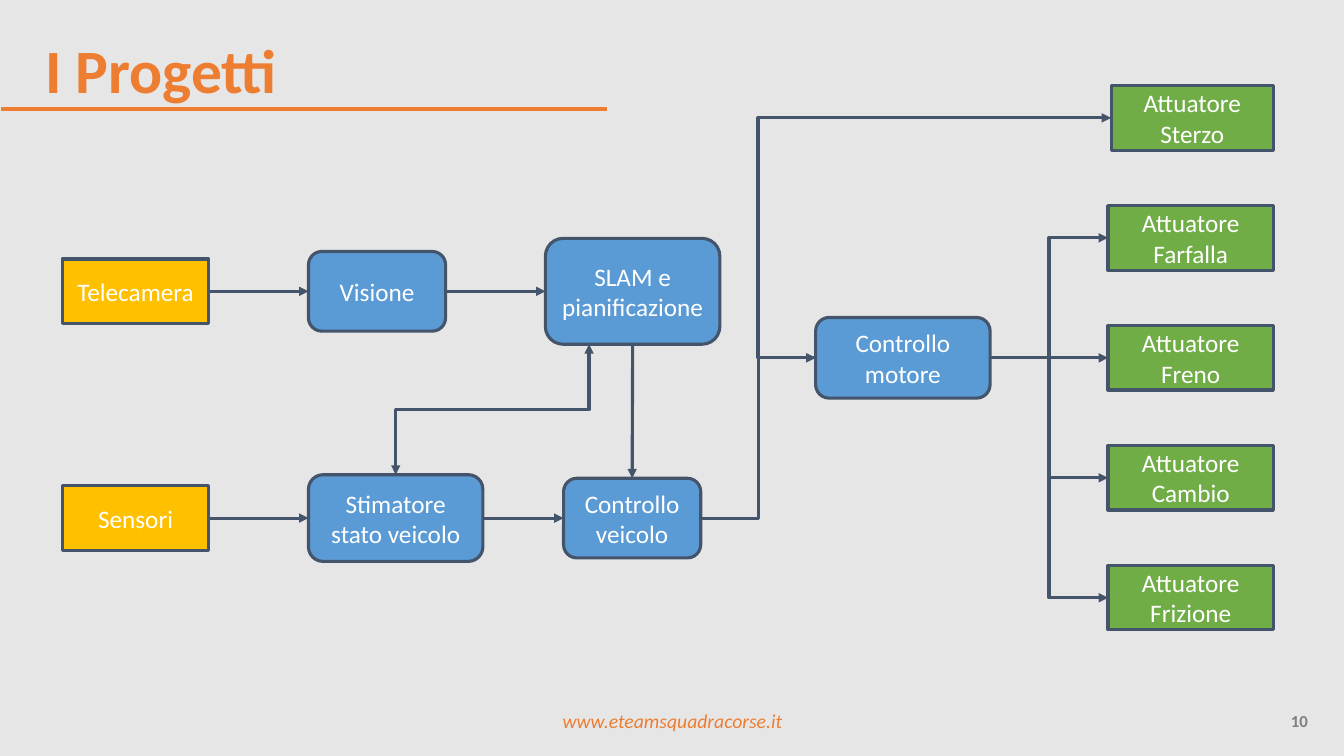
from dataclasses import dataclass

from lxml import etree
from pptx import Presentation
from pptx import util as u
from pptx.dml.color import RGBColor
from pptx.enum import shapes, text
from pptx.oxml import ns

Inches = u.Inches


@dataclass(frozen=True)
class Theme:
    font: str = "Calibri"
    background: str = "E7E6E6"
    accent: str = "ED7D31"
    source: str = "FFC000"
    process: str = "5B9BD5"
    actuator: str = "70AD47"
    outline: str = "44546A"
    label: str = "FFFFFF"
    number: str = "7F7F7F"
    title_size: int = 44
    label_size: int = 18
    footer_size: int = 14
    number_size: int = 12
    rule_width: float = 3
    line_width: float = 2.25


@dataclass(frozen=True)
class Box:
    left: float
    top: float
    width: float
    height: float

    def lengths(self):
        return [Inches(v) for v in (self.left, self.top, self.width, self.height)]


THEME = Theme()
RECT = shapes.MSO_SHAPE.RECTANGLE
ROUNDED = shapes.MSO_SHAPE.ROUNDED_RECTANGLE
STRAIGHT = shapes.MSO_CONNECTOR.STRAIGHT
ELBOW = shapes.MSO_CONNECTOR.ELBOW
TOP, LEFT, BOTTOM, RIGHT = range(4)


def rgb(code):
    return RGBColor.from_string(code)


def write(frame, wording, size, color, align, bold=False, italic=False):
    """Fill a text frame, one paragraph for each line of the wording."""
    frame.word_wrap = True
    frame.vertical_anchor = text.MSO_ANCHOR.MIDDLE
    for index, line in enumerate(wording.split("\n")):
        paragraph = frame.add_paragraph() if index else frame.paragraphs[0]
        paragraph.alignment = align
        run = paragraph.add_run()
        run.text = line
        font = run.font
        font.name, font.size = THEME.font, u.Pt(size)
        font.bold, font.italic = bold, italic
        font.color.rgb = rgb(color)


def add_line(slide, kind, begin, end, color, width):
    line = slide.shapes.add_connector(kind, *begin, *end)
    line.line.color.rgb = rgb(color)
    line.line.width = u.Pt(width)
    etree.SubElement(line._element.spPr, ns.qn("a:effectLst"))
    return line


def add_arrowheads(line, *ends):
    outline = line.line._get_or_add_ln()
    for end in ends:
        etree.SubElement(outline, ns.qn(f"a:{end}"), type="triangle")


def side(node, number):
    """Return the middle of a node's side."""
    x, y = node.left + node.width // 2, node.top + node.height // 2
    return [(x, node.top), (node.left, y),
            (x, node.top + node.height), (node.left + node.width, y)][number]


def straight_arrow(slide, origin, target, leave=RIGHT, arrive=LEFT):
    arrow = add_line(slide, STRAIGHT, side(origin, leave), side(target, arrive),
                     THEME.outline, THEME.line_width)
    arrow.begin_connect(origin, leave)
    arrow.end_connect(target, arrive)
    add_arrowheads(arrow, "tailEnd")


def bent_arrow(slide, begin, end, bend=0.5):
    """Leave sideways and turn at the bend, a share of the horizontal run."""
    arrow = add_line(slide, ELBOW, begin, end, THEME.outline, THEME.line_width)
    guides = arrow._element.spPr.find(ns.qn("a:prstGeom")).find(ns.qn("a:avLst"))
    etree.SubElement(guides, ns.qn("a:gd"), name="adj1",
                     fmla=f"val {round(bend * 100000)}")
    add_arrowheads(arrow, "tailEnd")


def upright_double_arrow(slide, begin, end):
    """Leave upwards and turn halfway: a sideways elbow given a quarter turn."""
    x, y = (begin[0] + end[0]) // 2, (begin[1] + end[1]) // 2
    dx, dy = begin[0] - x, begin[1] - y
    arrow = add_line(slide, ELBOW, (x + dy, y - dx), (x - dy, y + dx),
                     THEME.outline, THEME.line_width)
    arrow._element.spPr.find(ns.qn("a:xfrm")).set("rot", str(90 * 60000))
    add_arrowheads(arrow, "headEnd", "tailEnd")


def add_node(slide, kind, fill, wording, box):
    node = slide.shapes.add_shape(kind, *box.lengths())
    node.shadow.inherit = False
    node.fill.solid()
    node.fill.fore_color.rgb = rgb(fill)
    node.line.color.rgb = rgb(THEME.outline)
    node.line.width = u.Pt(THEME.line_width)
    write(node.text_frame, wording, THEME.label_size, THEME.label,
          text.PP_ALIGN.CENTER)
    return node


def build_heading(slide, box):
    rule_y = Inches(box.top + 0.89)
    add_line(slide, STRAIGHT, (Inches(0.01), rule_y),
             (Inches(box.left + box.width), rule_y), THEME.accent, THEME.rule_width)
    title = slide.shapes.title
    title.left, title.top, title.width, title.height = box.lengths()
    write(title.text_frame, "I Progetti", THEME.title_size, THEME.accent,
          text.PP_ALIGN.LEFT, bold=True)
    title.text_frame.paragraphs[0].line_spacing = 0.9


def build_footer(slide, box):
    site_box = Box(box.left, box.top, 4.5, box.height)
    number_box = Box(box.left + box.width - 0.6, box.top, 0.6, box.height)
    site = slide.shapes.add_textbox(*site_box.lengths())
    write(site.text_frame, "www.eteamsquadracorse.it", THEME.footer_size,
          THEME.accent, text.PP_ALIGN.CENTER, italic=True)
    number = slide.shapes.add_textbox(*number_box.lengths())
    write(number.text_frame, "10", THEME.number_size, THEME.number,
          text.PP_ALIGN.RIGHT, bold=True)


def build_diagram(slide, box):
    """Draw the flow from sensors to actuators; nodes are centred on rows."""
    node_height, row_step = 0.64, 1.19
    rows = [node_height / 2 + row_step * i for i in range(5)]
    vision_row, motor_row, state_row = 2.04, rows[2], 4.29

    def place(kind, fill, wording, left, row, width, height=node_height):
        return add_node(slide, kind, fill, wording, Box(
            box.left + left, box.top + row - height / 2, width, height))

    def process(*details):
        return place(ROUNDED, THEME.process, *details)

    def actuator(name, row, width=1.64):
        return place(RECT, THEME.actuator, f"Attuatore\n{name}",
                     box.width - width, row, width)

    camera = place(RECT, THEME.source, "Telecamera", 0, vision_row, 1.45)
    sensors = place(RECT, THEME.source, "Sensori", 0, state_row, 1.45)
    vision = process("Visione", 2.44, vision_row, 1.36, 0.79)
    slam = process("SLAM e pianificazione", 4.79, vision_row, 1.73, 1.05)
    estimator = process("Stimatore stato veicolo", 2.44, state_row, 1.73, 0.86)
    vehicle = process("Controllo\nveicolo", 4.97, state_row, 1.36, 0.79)
    motor = process("Controllo\nmotore", 7.47, motor_row, 1.73, 0.8)
    steering = actuator("Sterzo", rows[0], 1.61)
    throttle, brake, gearbox, clutch = [
        actuator(name, row) for name, row in
        zip(("Farfalla", "Freno", "Cambio", "Frizione"), rows[1:])]

    for origin, target in ((camera, vision), (vision, slam), (sensors, estimator),
                           (estimator, vehicle), (motor, brake)):
        straight_arrow(slide, origin, target)
    straight_arrow(slide, slam, vehicle, BOTTOM, TOP)
    for target in (throttle, gearbox, clutch):
        bent_arrow(slide, side(motor, RIGHT), side(target, LEFT))
    bent_arrow(slide, side(vehicle, RIGHT), side(motor, LEFT))
    half_gap = (motor.left - vehicle.left - vehicle.width) / 2
    bent_arrow(slide, side(motor, LEFT), side(steering, LEFT),
               -half_gap / (steering.left - motor.left))
    slam_quarter = (slam.left + slam.width // 4, slam.top + slam.height)
    upright_double_arrow(slide, side(estimator, TOP), slam_quarter)


def main():
    deck = Presentation()
    deck.slide_width, deck.slide_height = Inches(13.33), Inches(7.5)
    slide = deck.slides.add_slide(deck.slide_layouts[5])
    slide.background.fill.solid()
    slide.background.fill.fore_color.rgb = rgb(THEME.background)
    build_heading(slide, Box(0.35, 0.19, 5.67, 1.07))
    build_footer(slide, Box(4.42, 6.95, 8.65, 0.4))
    build_diagram(slide, Box(0.62, 0.85, 12.01, 5.4))
    deck.save("out.pptx")


if __name__ == "__main__":
    main()
